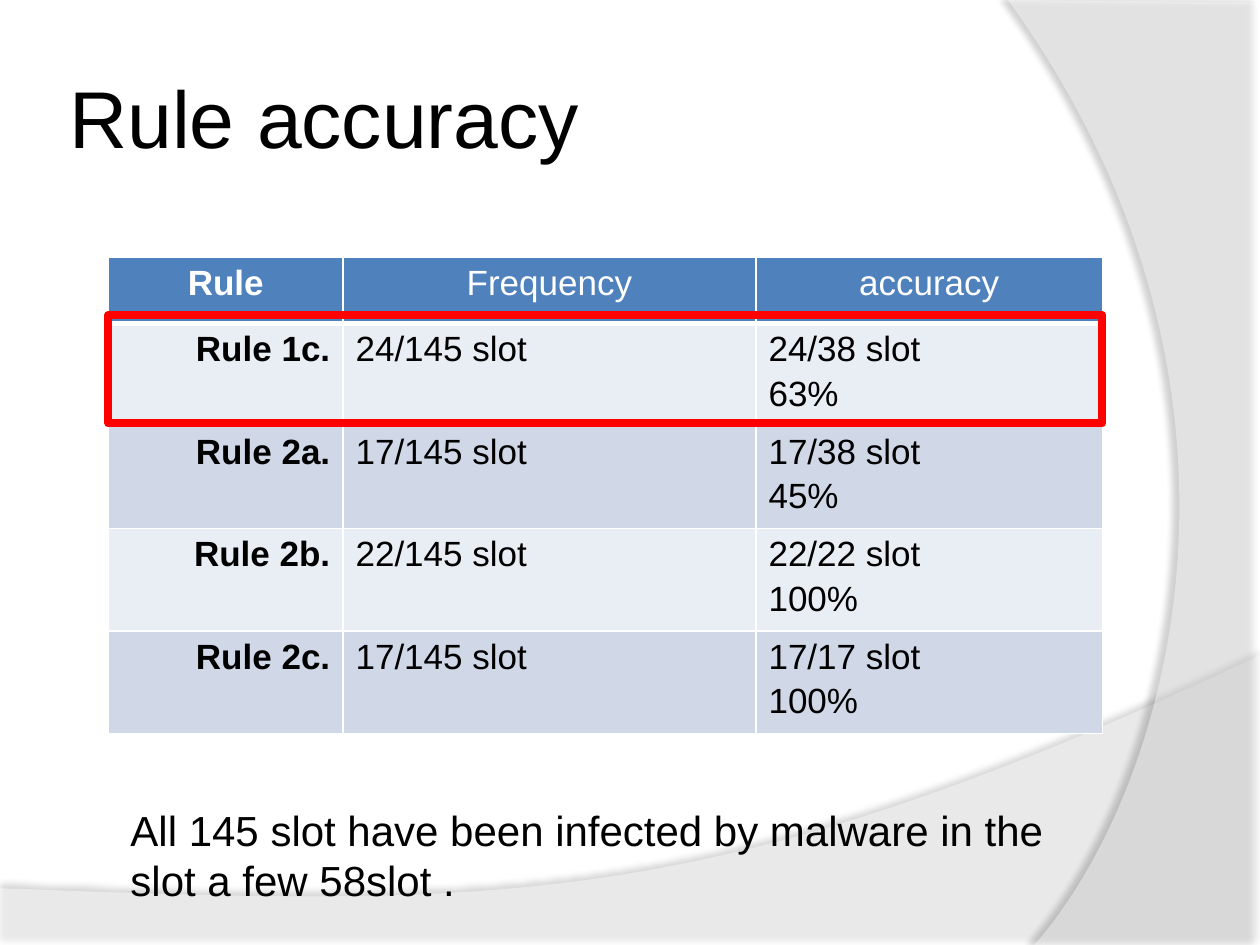
from lxml import etree
from pptx import Presentation
from pptx import util as u
from pptx.dml.color import RGBColor
from pptx.enum import shapes, text
from pptx.oxml import ns

Pt = u.Pt
FONT = "Arial"
BLACK = RGBColor(0, 0, 0)
WHITE = RGBColor(255, 255, 255)
RED = RGBColor(255, 0, 0)
HEADER = RGBColor(0x4F, 0x81, 0xBD)
BANDS = RGBColor(0xE9, 0xED, 0xF4), RGBColor(0xD0, 0xD8, 0xE8)
LEFT, CENTER, RIGHT = text.PP_ALIGN.LEFT, text.PP_ALIGN.CENTER, text.PP_ALIGN.RIGHT

ROWS = [
    ("Rule", "Frequency", "accuracy"),
    ("Rule 1c.", "24/145 slot", "24/38 slot\n63%"),
    ("Rule 2a.", "17/145 slot", "17/38 slot\n45%"),
    ("Rule 2b.", "22/145 slot", "22/22 slot\n100%"),
    ("Rule 2c.", "17/145 slot", "17/17 slot\n100%"),
]


def add(parent, tag, **attrs):
    return etree.SubElement(parent, ns.qn(tag), {k: str(v) for k, v in attrs.items()})


def bezier(p0, p1, p2, p3, steps=60):
    """Points along a cubic curve, both ends included."""
    points = []
    for i in range(steps + 1):
        t = i / steps
        weights = (1 - t) ** 3, 3 * t * (1 - t) ** 2, 3 * t * t * (1 - t), t ** 3
        points.append(tuple(sum(w * p[axis] for w, p in zip(weights, (p0, p1, p2, p3)))
                            for axis in (0, 1)))
    return points


class Deck:
    def __init__(self, slide):
        self.s = slide

    def add_text(self, tf, content, size, color, align=LEFT, bold=False, before=0):
        for i, line in enumerate(content.split("\n")):
            p = tf.paragraphs[0] if i == 0 else tf.add_paragraph()
            p.alignment = align
            p.space_before = Pt(before)
            r = p.add_run()
            r.text = line
            r.font.name, r.font.size, r.font.bold = FONT, Pt(size), bold
            r.font.color.rgb = color

    def textbox(self, box, content, size, anchor=text.MSO_ANCHOR.TOP, margin=7.2, before=0):
        tf = self.s.shapes.add_textbox(*map(Pt, box)).text_frame
        tf.word_wrap = True
        tf.vertical_anchor = anchor
        tf.margin_left = tf.margin_right = Pt(margin)
        self.add_text(tf, content, size, BLACK, before=before)

    def swoosh(self, points, opacity, shadow_opacity, distance, direction):
        """Translucent white outline with a soft shadow; opacities in percent."""
        start, *rest = [(Pt(x), Pt(y)) for x, y in points]
        builder = self.s.shapes.build_freeform(*start)
        builder.add_line_segments(rest, close=True)
        sp = builder.convert_to_shape()
        sp.line.fill.background()
        sp.fill.solid()
        sp.fill.fore_color.rgb = WHITE
        sp.shadow.inherit = False
        spPr = sp._element.spPr
        color = spPr.find(ns.qn("a:solidFill"))[0]
        add(color, "a:alpha", val=opacity * 1000)
        shadow = add(spPr.find(ns.qn("a:effectLst")), "a:outerShdw", blurRad=Pt(4),
                     dist=Pt(distance), dir=direction * 60000, algn="ctr", rotWithShape=0)
        add(add(shadow, "a:srgbClr", val=BLACK), "a:alpha", val=shadow_opacity * 1000)

    def border(self, cell, side, width):
        ln = add(cell._tc.get_or_add_tcPr(), "a:" + side, w=Pt(width))
        add(add(ln, "a:solidFill"), "a:srgbClr", val=WHITE)

    def table(self, left, top, widths, heights, rows):
        table = self.s.shapes.add_table(len(rows), len(widths), Pt(left), Pt(top),
                                        Pt(sum(widths)), Pt(sum(heights))).table
        for column, width in zip(table.columns, widths):
            column.width = Pt(width)
        for i, (values, height) in enumerate(zip(rows, heights)):
            table.rows[i].height = Pt(height)
            for j, value in enumerate(values):
                cell = table.cell(i, j)
                align = CENTER if i == 0 else RIGHT if j == 0 else LEFT
                self.add_text(cell.text_frame, value, 20, BLACK if i else WHITE,
                              align, bold=j == 0, before=3.3)
                self.border(cell, "lnL", 1)
                self.border(cell, "lnR", 1)
                self.border(cell, "lnT", 3 if i == 1 else 1)
                self.border(cell, "lnB", 3 if i == 0 else 1)
                cell.fill.solid()
                cell.fill.fore_color.rgb = BANDS[(i - 1) % 2] if i else HEADER

    def frame(self, box, color, width):
        sp = self.s.shapes.add_shape(shapes.MSO_SHAPE.RECTANGLE, *map(Pt, box))
        sp.shadow.inherit = False
        sp.fill.background()
        sp.line.color.rgb = color
        sp.line.width = Pt(width)


def main():
    prs = Presentation()
    prs.slide_width, prs.slide_height = Pt(720), Pt(540)
    deck = Deck(prs.slides.add_slide(prs.slide_layouts[6]))

    bottom = bezier((720, 374.4), (402.5, 524.9), (281.5, 517.7), (0, 507.6))
    deck.swoosh([(0, 540.7), (720, 540.7)] + bottom, 45, 35, 3.5, 270)
    side = bezier((591.1, 540), (673.2, 445.7), (733, 216), (576, 0))
    deck.swoosh([(720, 1.4), (720, 540)] + side, 40, 45, 4, 180)

    deck.textbox((36, 21.6, 588, 90), "Rule accuracy", 46,
                 text.MSO_ANCHOR.MIDDLE, margin=3.6)
    deck.table(62, 147, (134, 236, 198), [38] + [55.8] * 4, ROWS)
    deck.textbox((67.5, 456, 556.5, 65),
                 "All 145 slot have been infected by malware in the slot a few 58slot .",
                 24, before=4)
    deck.frame((62, 180, 568, 62), RED, 4.5)
    prs.save("out.pptx")


if __name__ == "__main__":
    main()
